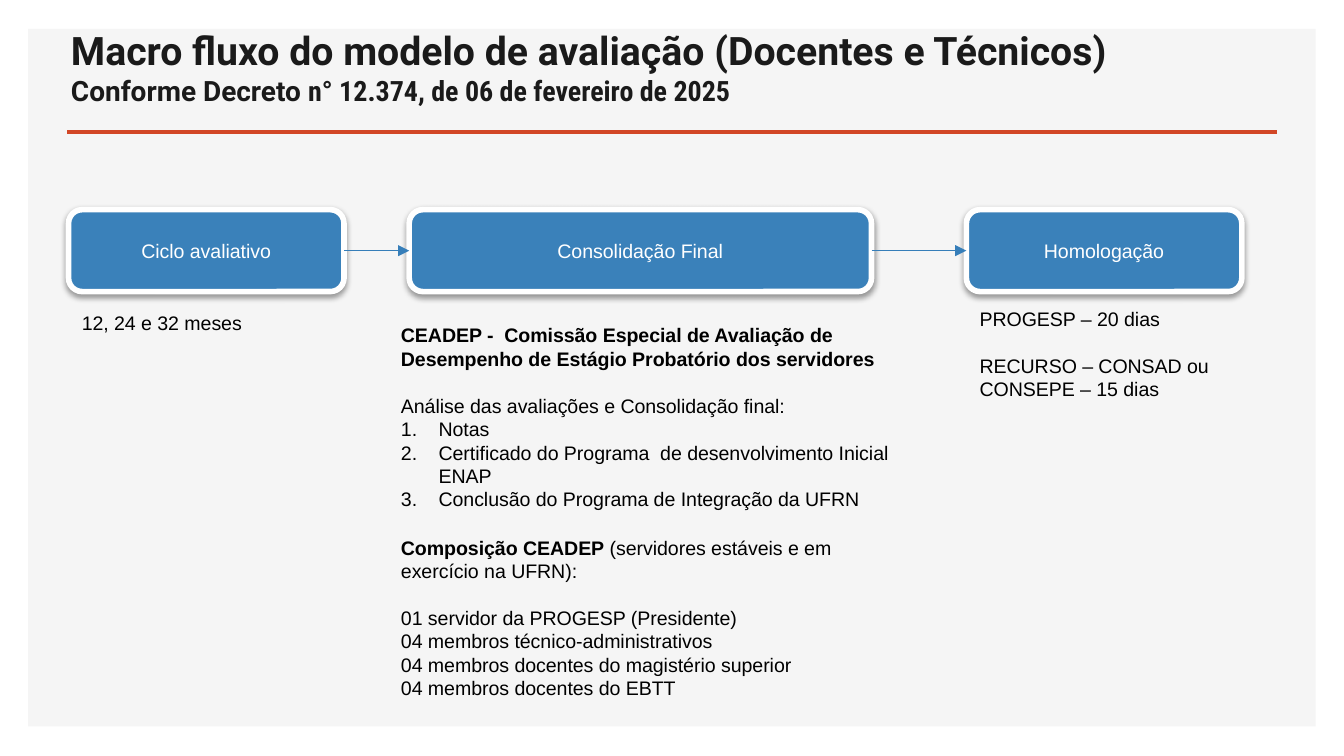
from lxml import etree
from pptx import Presentation
from pptx.dml.color import RGBColor
from pptx.enum.shapes import MSO_CONNECTOR, MSO_SHAPE
from pptx.enum.text import MSO_ANCHOR, PP_ALIGN
from pptx.oxml.ns import qn
from pptx.util import Pt

PX = 4572  # 200 px to the inch
STRAIGHT = MSO_CONNECTOR.STRAIGHT
RECT, ROUNDED = MSO_SHAPE.RECTANGLE, MSO_SHAPE.ROUNDED_RECTANGLE
MIDDLE, BOTTOM = MSO_ANCHOR.MIDDLE, MSO_ANCHOR.BOTTOM
CENTER = PP_ALIGN.CENTER
LEFT_SITE, RIGHT_SITE = 1, 3
BODY_SIZE, LINE_GAP = 10.5, Pt(12.5)
COLORS = {
    "panel": "F5F5F5", "rule": "D24726", "title": "1A1A1A", "step": "3A81BA",
    "arrow": "367EB9", "white": "FFFFFF", "black": "000000",
}


def color(name):
    return RGBColor.from_string(COLORS[name])


def add_run(paragraph, text, bold=False, size=BODY_SIZE, face="Arial", ink="black"):
    run = paragraph.add_run()
    run.text = text
    run.font.size = Pt(size)
    run.font.name = face
    run.font.bold = bold
    run.font.color.rgb = color(ink)


prs = Presentation()
prs.slide_width, prs.slide_height = 2000 * PX, 1125 * PX
slide = prs.slides.add_slide(prs.slide_layouts[6])
shapes = slide.shapes

panel = shapes.add_shape(RECT, 42 * PX, 43 * PX, 1916 * PX, 1038 * PX)
panel.shadow.inherit = False
panel.fill.solid()
panel.fill.fore_color.rgb = color("panel")
panel.line.fill.background()

rule = shapes.add_connector(STRAIGHT, 100 * PX, 196 * PX, 1900 * PX, 196 * PX)
rule.line.color.rgb = color("rule")
rule.line.width = Pt(2)
etree.SubElement(rule._element.spPr, qn("a:effectLst"))

# Title
title = shapes.add_textbox(86 * PX, 73 * PX, 1688 * PX, 106 * PX).text_frame
title.word_wrap = True
title.vertical_anchor = BOTTOM
title.margin_top = title.margin_bottom = 20 * PX
heading = title.paragraphs[0]
add_run(heading, "Macro fluxo do modelo de avaliação (Docentes e Técnicos)", True, 21, "Roboto", "title")
heading.add_line_break()
add_run(heading, "Conforme Decreto ", True, 15, "Roboto", "title")
add_run(heading, "n° 12.374, de 06 de fevereiro de 2025", True, 15, "Roboto Condensed", "title")

# Process steps
steps = []
for label, left, width in [
    ("Ciclo avaliativo", 102, 410),
    ("Consolidação Final", 609, 688),
    ("Homologação", 1438, 410),
]:
    step = shapes.add_shape(ROUNDED, left * PX, 312 * PX, width * PX, 122 * PX)
    step.fill.solid()
    step.fill.fore_color.rgb = color("step")
    step.line.color.rgb = color("white")
    step.line.width = Pt(3)
    step.shadow.inherit = False
    effects = step._element.spPr.find(qn("a:effectLst"))
    shadow = etree.SubElement(effects, qn("a:outerShdw"), blurRad="40000", dist="20000",
                              dir="5400000", rotWithShape="0")
    shade = etree.SubElement(shadow, qn("a:srgbClr"), val=COLORS["black"])
    etree.SubElement(shade, qn("a:alpha"), val="38000")
    step.text_frame.vertical_anchor = MIDDLE
    caption = step.text_frame.paragraphs[0]
    caption.alignment = CENTER
    add_run(caption, label, ink="white")
    steps.append(step)

for source, target in zip(steps, steps[1:]):
    arrow = shapes.add_connector(STRAIGHT, 0, 0, 0, 0)
    arrow.begin_connect(source, RIGHT_SITE)
    arrow.end_connect(target, LEFT_SITE)
    arrow.line.color.rgb = color("arrow")
    arrow.line.width = Pt(0.75)
    etree.SubElement(arrow.line._get_or_add_ln(), qn("a:tailEnd"), type="triangle")
    etree.SubElement(arrow._element.spPr, qn("a:effectLst"))

# Details: each paragraph is (kind, [(text, bold), ...])
details = [
    ((102, 453, 410, 56), [("plain", [("12, 24 e 32 meses", False)])]),
    ((577, 471, 796, 302), [
        ("plain", [("CEADEP -  Comissão Especial de Avaliação de", True)]),
        ("plain", [("Desempenho de Estágio Probatório dos servidores", True)]),
        ("spaced", [("Análise das avaliações e Consolidação final:", False)]),
        ("numbered", [("Notas", False)]),
        ("numbered", [("Certificado do Programa  de desenvolvimento Inicial ENAP", False)]),
        ("numbered", [("Conclusão do Programa de Integração da UFRN", False)]),
    ]),
    ((1438, 447, 410, 162), [
        ("plain", [("PROGESP – 20 dias", False)]),
        ("spaced", [("RECURSO – CONSAD ou CONSEPE – 15 dias", False)]),
    ]),
    ((577, 787, 796, 267), [
        ("plain", [("Composição CEADEP ", True),
                   ("(servidores estáveis e em exercício na UFRN):", False)]),
        ("spaced", [("01 servidor da PROGESP (Presidente)", False)]),
        ("plain", [("04 membros técnico-administrativos", False)]),
        ("plain", [("04 membros docentes do magistério superior", False)]),
        ("plain", [("04 membros docentes do EBTT", False)]),
    ]),
]
for bounds, paragraphs in details:
    frame = shapes.add_textbox(*(length * PX for length in bounds)).text_frame
    frame.word_wrap = True
    for index, (kind, runs) in enumerate(paragraphs):
        paragraph = frame.add_paragraph() if index else frame.paragraphs[0]
        if kind == "spaced":
            paragraph.space_before = LINE_GAP
        elif kind == "numbered":
            properties = paragraph._p.get_or_add_pPr()
            properties.set("marL", str(56 * PX))
            properties.set("indent", str(-56 * PX))
            bullet_color = etree.SubElement(properties, qn("a:buClr"))
            etree.SubElement(bullet_color, qn("a:srgbClr"), val=COLORS["black"])
            etree.SubElement(properties, qn("a:buFont"), typeface="Arial")
            etree.SubElement(properties, qn("a:buAutoNum"), type="arabicPeriod")
        for text, bold in runs:
            add_run(paragraph, text, bold)

prs.save("out.pptx")
